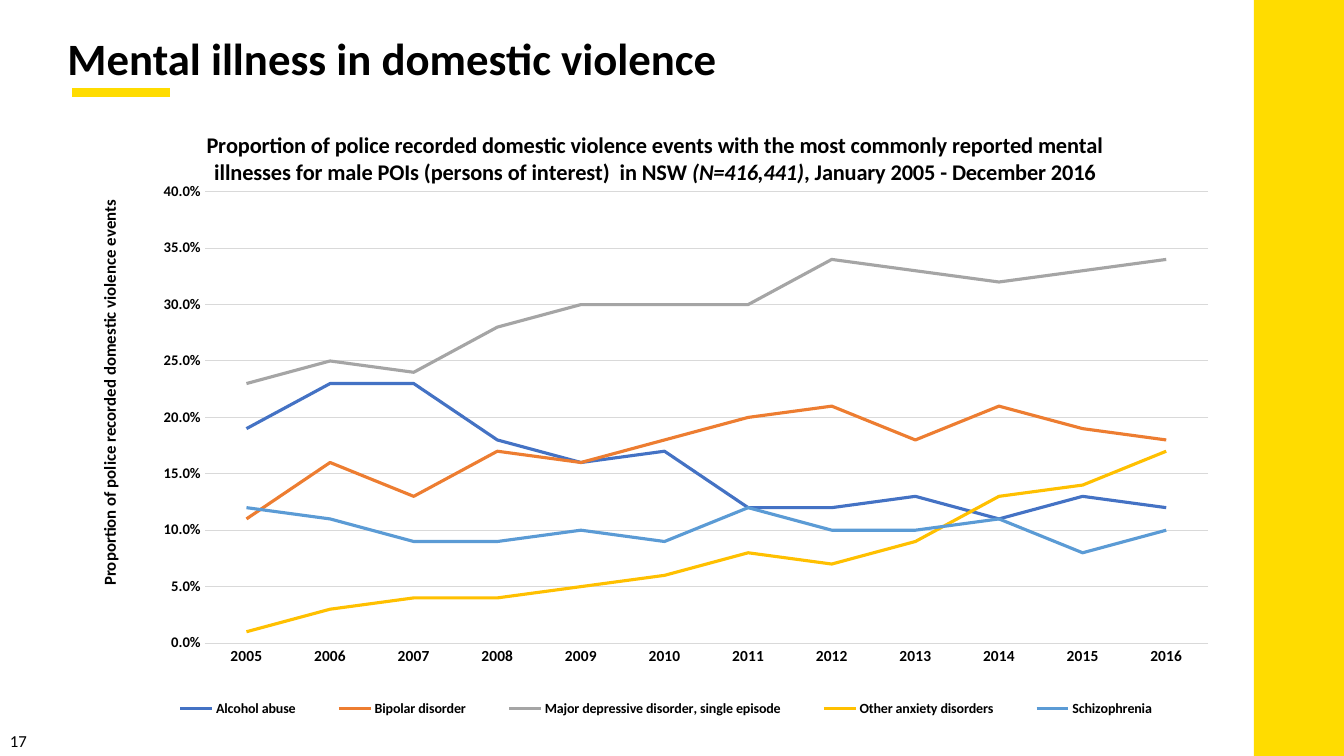
from lxml import etree
from pptx import Presentation
from pptx.chart.data import CategoryChartData
from pptx.dml.color import RGBColor
from pptx.enum.chart import XL_CHART_TYPE, XL_LEGEND_POSITION, XL_MARKER_STYLE, XL_TICK_MARK
from pptx.enum.shapes import MSO_CONNECTOR, MSO_SHAPE
from pptx.oxml.ns import qn
from pptx.util import Cm, Pt

LINE_CHART = XL_CHART_TYPE.LINE
BOTTOM = XL_LEGEND_POSITION.BOTTOM
NO_MARKER = XL_MARKER_STYLE.NONE
NO_TICK = XL_TICK_MARK.NONE
STRAIGHT = MSO_CONNECTOR.STRAIGHT
RECT = MSO_SHAPE.RECTANGLE

FONT = "Calibri"
COLORS = {
    "text": "000000",
    "accent": "FFDC00",
    "grid": "D9D9D9",
    "Alcohol abuse": "4472C4",
    "Bipolar disorder": "ED7D31",
    "Major depressive disorder, single episode": "A5A5A5",
    "Other anxiety disorders": "FFC000",
    "Schizophrenia": "5B9BD5",
}
YEARS = [str(year) for year in range(2005, 2017)]
SHARES = {
    "Alcohol abuse":
        [0.19, 0.23, 0.23, 0.18, 0.16, 0.17, 0.12, 0.12, 0.13, 0.11, 0.13, 0.12],
    "Bipolar disorder":
        [0.11, 0.16, 0.13, 0.17, 0.16, 0.18, 0.2, 0.21, 0.18, 0.21, 0.19, 0.18],
    "Major depressive disorder, single episode":
        [0.23, 0.25, 0.24, 0.28, 0.3, 0.3, 0.3, 0.34, 0.33, 0.32, 0.33, 0.34],
    "Other anxiety disorders":
        [0.01, 0.03, 0.04, 0.04, 0.05, 0.06, 0.08, 0.07, 0.09, 0.13, 0.14, 0.17],
    "Schizophrenia":
        [0.12, 0.11, 0.09, 0.09, 0.1, 0.09, 0.12, 0.1, 0.1, 0.11, 0.08, 0.1],
}
TITLE_RUNS = [
    ("Proportion of police recorded domestic violence events with the most commonly "
     "reported mental illnesses for male POIs (persons of interest)  in NSW ", False),
    ("(N=416,441)", True),
    (", January 2005 - December 2016", False),
]


def rgb(name):
    return RGBColor.from_string(COLORS[name])


def style_font(font, size, bold=False):
    font.name = FONT
    font.size = Pt(size)
    font.bold = bold
    font.color.rgb = rgb("text")


def style_line(line, color, width):
    line.color.rgb = rgb(color)
    line.width = Pt(width)


def add_text(slide, text, left, top, width, height, size, bold=False, wrap=True):
    tf = slide.shapes.add_textbox(Cm(left), Cm(top), Cm(width), Cm(height)).text_frame
    tf.word_wrap = wrap
    p = tf.paragraphs[0]
    p.text = text
    style_font(p.font, size, bold)


def add_side_bar(slide):
    sp = slide.shapes.add_shape(RECT, Cm(31.6), Cm(0), Cm(2.27), Cm(19.05))
    sp.shadow.inherit = False
    sp.fill.solid()
    sp.fill.fore_color.rgb = rgb("accent")
    sp.line.fill.background()


def add_underline(slide):
    line = slide.shapes.add_connector(STRAIGHT, Cm(1.81), Cm(2.33), Cm(4.29), Cm(2.33))
    style_line(line.line, "accent", 6)
    etree.SubElement(line._element.spPr, qn("a:effectLst"))


def set_layout(parent, **values):
    for old in parent.findall(qn("c:layout")):
        parent.remove(old)
    layout = etree.Element(qn("c:layout"))
    manual = etree.SubElement(layout, qn("c:manualLayout"))
    for tag, value in values.items():
        etree.SubElement(manual, qn(f"c:{tag}")).set("val", str(value))
    overlay = parent.find(qn("c:overlay"))
    if overlay is None:
        parent.insert(0, layout)
    else:
        overlay.addprevious(layout)


def set_title(title, runs, size, x, y):
    p = title.text_frame.paragraphs[0]
    style_font(p.font, size, True)
    for text, italic in runs:
        r = p.add_run()
        r.text = text
        style_font(r.font, size, True)
        r.font.italic = italic
    set_layout(title._element, xMode="edge", yMode="edge", x=x, y=y)


def style_axes(chart):
    years, share = chart.category_axis, chart.value_axis
    for axis, size in ((years, 11), (share, 10.5)):
        axis.major_tick_mark = axis.minor_tick_mark = NO_TICK
        style_font(axis.tick_labels.font, size, True)
    style_line(years.format.line, "grid", 0.75)
    share.minimum_scale, share.maximum_scale, share.major_unit = 0, 0.4, 0.05
    share.tick_labels.number_format = "0.0%"
    share.tick_labels.number_format_is_linked = False
    share.format.line.fill.background()
    style_line(share.major_gridlines.format.line, "grid", 0.75)
    set_title(share.axis_title,
              [("Proportion of police recorded domestic violence events", False)],
              12, 0.02, 0.14)


def add_illness_chart(slide):
    data = CategoryChartData(number_format="0.0%")
    data.categories = YEARS
    for illness, shares in SHARES.items():
        data.add_series(illness, shares)
    chart = slide.shapes.add_chart(
        LINE_CHART, Cm(1.81), Cm(2.73), Cm(29.37), Cm(15.93), data).chart
    style_font(chart.font, 10)
    set_title(chart.chart_title, TITLE_RUNS, 16, 0.113, 0.03)
    style_axes(chart)
    chart.plots[0].vary_by_categories = False
    for series in chart.plots[0].series:
        series.smooth = False
        series.marker.style = NO_MARKER
        style_line(series.format.line, series.name, 2.25)
    chart.has_legend = True
    chart.legend.position = BOTTOM
    chart.legend.include_in_layout = False
    style_font(chart.legend.font, 10, True)
    set_layout(chart.legend._element, xMode="edge", yMode="edge",
               x=0.06, y=0.93, w=0.9, h=0.04)
    plot_area = chart._chartSpace.chart.plotArea
    set_layout(plot_area, layoutTarget="inner", xMode="edge", yMode="edge",
               x=0.114, y=0.132, w=0.861, h=0.714)


def main():
    prs = Presentation()
    prs.slide_width, prs.slide_height = Cm(33.87), Cm(19.05)
    slide = prs.slides.add_slide(prs.slide_layouts[6])
    add_side_bar(slide)
    add_underline(slide)
    add_text(slide, "Mental illness in domestic violence", 1.45, 0.64, 31.78, 1.63, 32, True)
    add_illness_chart(slide)
    add_text(slide, "17", 0, 18.29, 0.94, 0.76, 12, wrap=False)
    prs.save("out.pptx")


if __name__ == "__main__":
    main()
